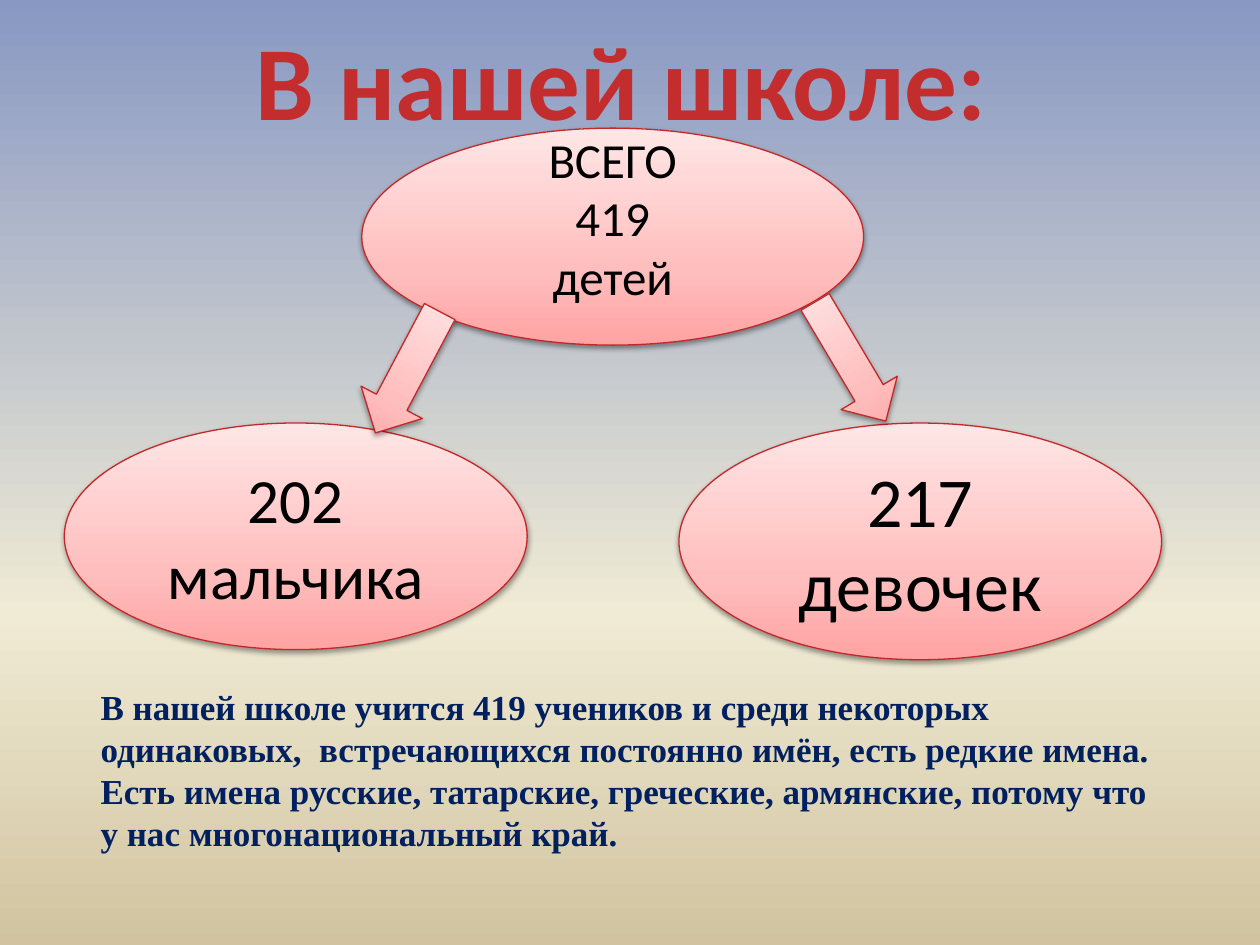
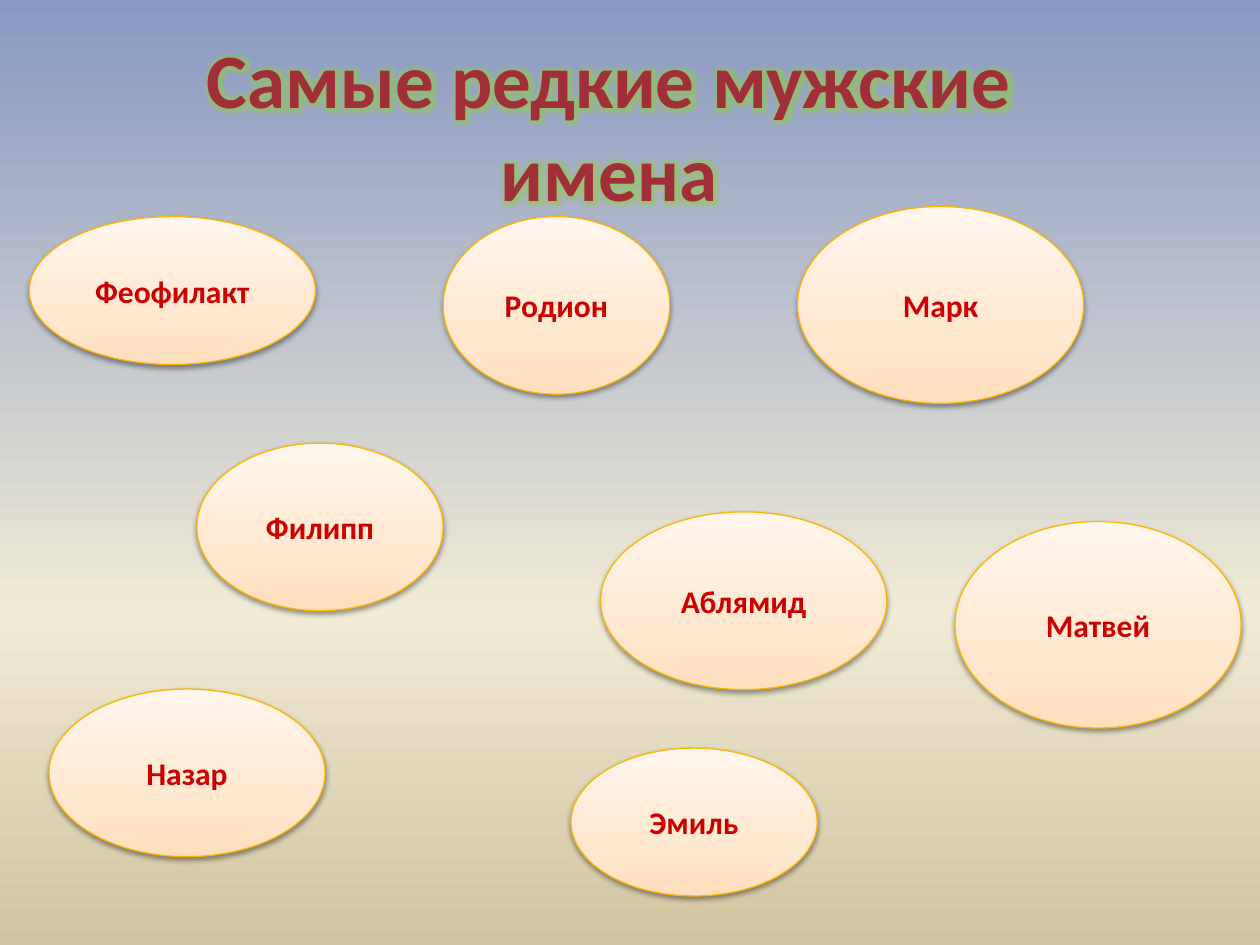
import pptx
import pptx.dml.color
import pptx.enum.shapes
import pptx.enum.text
import pptx.oxml
import pptx.oxml.ns
import pptx.util

Pt = pptx.util.Pt
SHAPE = pptx.enum.shapes.MSO_SHAPE
ALIGN = pptx.enum.text.PP_ALIGN
ANCHOR = pptx.enum.text.MSO_ANCHOR
qn = pptx.oxml.ns.qn
NS = pptx.oxml.ns.nsdecls("a")

# Shared look: gradients as (position %, colour) stops
SKY_TO_SAND = [(0, "8898C3"), (65, "F0EBD5"), (100, "D1C39F")]
PINK = {"stops": [(0, "FFA3A3"), (35, "FFBEBE"), (100, "FFE6E6")], "line": "C22829"}
CREAM = {"stops": [(0, "FFDFBC"), (35, "FFE8D0"), (100, "FFF6ED")], "line": "FEB604"}
BODY_FONT = "Calibri"


def color(hex_value):
    return pptx.dml.color.RGBColor.from_string(hex_value)


def effects(content):
    return pptx.oxml.parse_xml(f"<a:effectLst {NS}>{content}</a:effectLst>")


def set_gradient(fill, element, stops, angle):
    """Give a fill several stops; angle runs clockwise in degrees."""
    fill.gradient()
    old = next(element.iter(qn("a:gradFill")))
    gs = "".join(f'<a:gs pos="{pos * 1000}"><a:srgbClr val="{c}"/></a:gs>'
                 for pos, c in stops)
    new = pptx.oxml.parse_xml(
        f'<a:gradFill {NS} rotWithShape="1"><a:gsLst>{gs}</a:gsLst>'
        f'<a:lin ang="{angle * 60000}" scaled="0"/></a:gradFill>')
    old.getparent().replace(old, new)


def add_slide(prs):
    s = prs.slides.add_slide(prs.slide_layouts[6])
    set_gradient(s.background.fill, s.element, SKY_TO_SAND, 90)
    return s


def add_run(p, text, size, hex_value, bold=False, font=BODY_FONT):
    r = p.add_run()
    r.text = text
    r.font.size = Pt(size)
    r.font.bold = bold
    r.font.color.rgb = color(hex_value)
    r.font.name = font
    return r


def add_text(s, box, text, size, hex_value, font=BODY_FONT,
             align=ALIGN.LEFT, anchor=ANCHOR.TOP):
    tf = s.shapes.add_textbox(*map(Pt, box)).text_frame
    tf.word_wrap = True
    tf.vertical_anchor = anchor
    p = tf.paragraphs[0]
    p.alignment = align
    return add_run(p, text, size, hex_value, True, font)


def add_title(s, box, text, size, hex_value):
    return add_text(s, box, text, size, hex_value,
                    align=ALIGN.CENTER, anchor=ANCHOR.MIDDLE)


def add_glow(r, hex_value, radius, opacity):
    glow = effects(f'<a:glow rad="{Pt(radius)}"><a:srgbClr val="{hex_value}">'
                   f'<a:alpha val="{opacity * 1000}"/></a:srgbClr></a:glow>')
    next(r.font._element.iter(qn("a:latin"))).addprevious(glow)


def add_glossy(s, kind, box, look, rotation=0):
    """Preset shape with gradient, thin outline and soft drop shadow."""
    sp = s.shapes.add_shape(kind, *map(Pt, box))
    sp.rotation = rotation
    set_gradient(sp.fill, sp.element, look["stops"], 270)
    sp.line.color.rgb = color(look["line"])
    sp.line.width = Pt(0.75)
    sp.shadow.inherit = False
    old = next(sp.element.iter(qn("a:effectLst")))
    old.getparent().replace(old, effects(
        f'<a:outerShdw blurRad="{Pt(3.1)}" dist="{Pt(1.6)}" dir="5400000" rotWithShape="0">'
        '<a:srgbClr val="000000"><a:alpha val="38000"/></a:srgbClr></a:outerShdw>'))
    return sp


def add_ellipse(s, box, look, lines, size, hex_value, bold=False):
    tf = add_glossy(s, SHAPE.OVAL, box, look).text_frame
    tf.word_wrap = True
    tf.vertical_anchor = ANCHOR.MIDDLE
    for i, line in enumerate(lines):
        p = tf.add_paragraph() if i else tf.paragraphs[0]
        p.alignment = ALIGN.CENTER
        add_run(p, line, size, hex_value, bold)
    return tf


def school_slide(prs):
    s = add_slide(prs)
    add_title(s, (31, 0, 648, 90), "В нашей школе:", 60, "C32D2E")

    # Total and its two parts
    total = add_ellipse(s, (206.75, 73.25, 286.75, 124), PINK,
                        ["ВСЕГО", "419", "детей"], 28, "000000")
    total.margin_bottom = Pt(25.6)
    add_ellipse(s, (36.75, 241.75, 264.5, 129.5), PINK, ["202 мальчика"], 36, "000000")
    add_ellipse(s, (388, 241.75, 275.75, 135.25), PINK, ["217 девочек"], 40, "000000")
    add_glossy(s, SHAPE.DOWN_ARROW, (213.1, 173.5, 39.6, 78.5), PINK, 27.9)
    add_glossy(s, SHAPE.DOWN_ARROW, (467.3, 167, 37.4, 79.2), PINK, 329.3)

    # Explanation
    add_text(s, (50.4, 388, 624.25, 104.4),
             "В нашей школе учится 419 учеников и среди некоторых одинаковых,  "
             "встречающихся постоянно имён, есть редкие имена. Есть имена русские, "
             "татарские, греческие, армянские, потому что у нас многонациональный край.",
             20, "002060", "Times New Roman")


def names_slide(prs):
    s = add_slide(prs)
    title = add_title(s, (73.4, 11.5, 549.4, 118.8),
                      "Самые редкие мужские имена", 44, "A12F37")
    add_glow(title, "92C94A", 8, 60)

    # Scattered names
    names = [
        ("Феофилакт", (16.75, 123.75, 163.5, 84.5)),
        ("Родион", (253.25, 123.75, 129.5, 101.5)),
        ("Филипп", (112.5, 253.25, 140.75, 95.75)),
        ("Назар", (28, 393.75, 157.75, 95.75)),
        ("Марк", (455.75, 118, 163.5, 112.5)),
        ("Матвей", (545.75, 298, 163.5, 118)),
        ("Аблямид", (343.25, 292.5, 163.5, 101.5)),
        ("Эмиль", (326.25, 427.5, 140.75, 84.5)),
    ]
    for name, box in names:
        add_ellipse(s, box, CREAM, [name], 18, "CC0000", True)


def main():
    prs = pptx.Presentation()
    prs.slide_width, prs.slide_height = Pt(720), Pt(540)
    school_slide(prs)
    names_slide(prs)
    prs.save("out.pptx")


if __name__ == "__main__":
    main()
